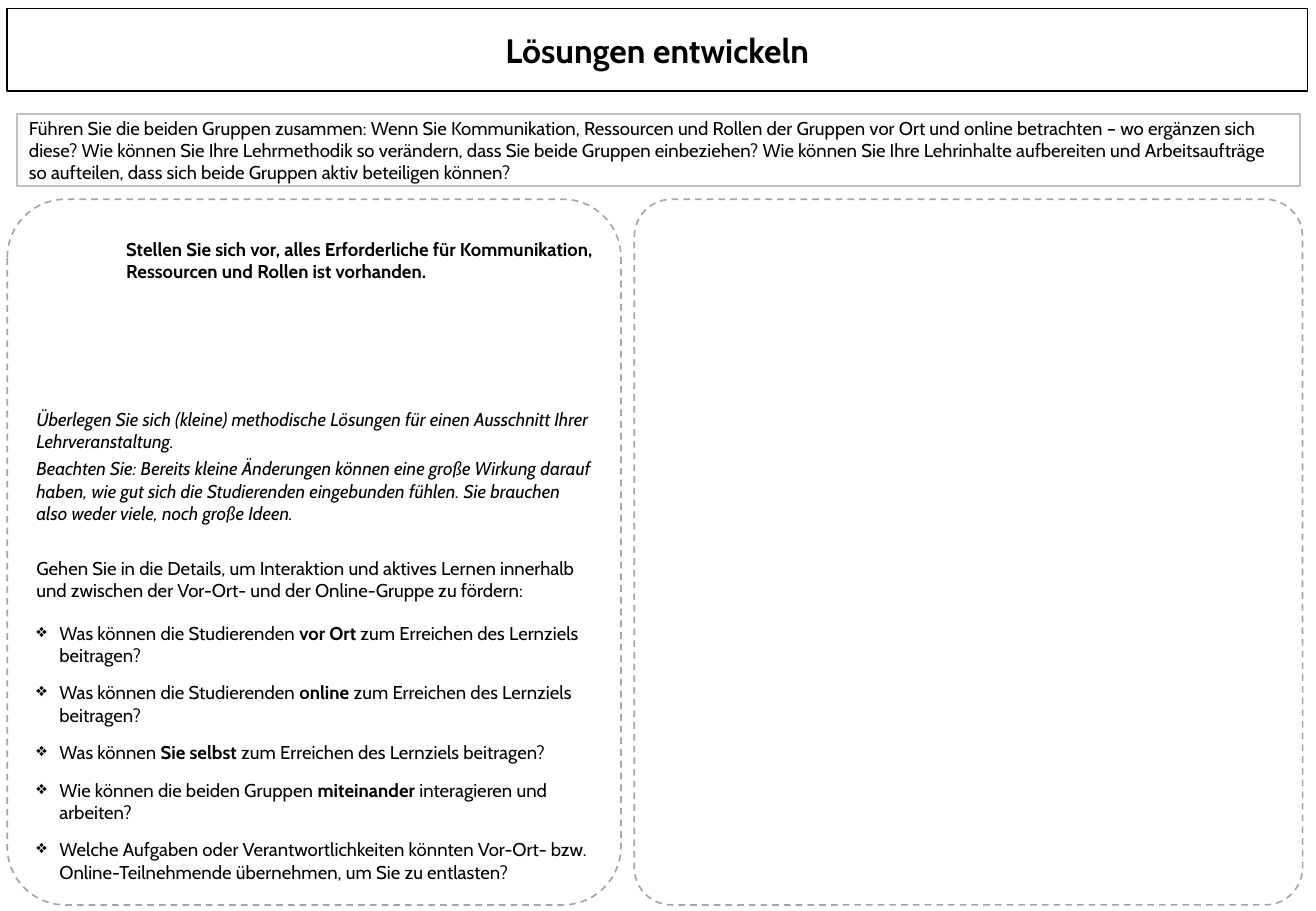
import pptx
import pptx.util
import pptx.dml.color
import pptx.enum.dml
import pptx.enum.shapes
import pptx.enum.text
import lxml.etree
import pptx.oxml.ns

Inches, Pt = pptx.util.Inches, pptx.util.Pt
Shape = pptx.enum.shapes.MSO_SHAPE
Anchor = pptx.enum.text.MSO_ANCHOR
Align = pptx.enum.text.PP_ALIGN
DASH = pptx.enum.dml.MSO_LINE.DASH

TITLE = "Lösungen entwickeln"
INTRO = (
    "Führen Sie die beiden Gruppen zusammen: Wenn Sie Kommunikation, Ressourcen "
    "und Rollen der Gruppen vor Ort und online betrachten – wo ergänzen sich diese? "
    "Wie können Sie Ihre Lehrmethodik so verändern, dass Sie beide Gruppen einbeziehen? "
    "Wie können Sie Ihre Lehrinhalte aufbereiten und Arbeitsaufträge so aufteilen, "
    "dass sich beide Gruppen aktiv beteiligen können?"
)
VISION = (
    "Stellen Sie sich vor, alles Erforderliche für Kommunikation, "
    "Ressourcen und Rollen ist vorhanden."
)
HINTS = [
    ("Überlegen Sie sich (kleine) methodische Lösungen für einen Ausschnitt "
     "Ihrer Lehrveranstaltung.", 3, True),
    ("Beachten Sie: Bereits kleine Änderungen können eine große Wirkung darauf haben, "
     "wie gut sich die Studierenden eingebunden fühlen. Sie brauchen also weder viele, "
     "noch große Ideen.", 19.4, True),
    ("Gehen Sie in die Details, um Interaktion und aktives Lernen innerhalb und "
     "zwischen der Vor-Ort- und der Online-Gruppe zu fördern:", 12, False),
]
ASKS = [
    ("Was können die Studierenden ", "vor Ort ", "zum Erreichen des Lernziels beitragen?"),
    ("Was können die Studierenden ", "online", " zum Erreichen des Lernziels beitragen?"),
    ("Was können ", "Sie selbst ", "zum Erreichen des Lernziels beitragen?"),
    ("Wie können die beiden Gruppen ", "miteinander", " interagieren und arbeiten?"),
    ("Welche Aufgaben oder Verantwortlichkeiten könnten Vor-Ort- bzw. "
     "Online-Teilnehmende übernehmen, um Sie zu entlasten?",),
]
TOP, HIGH = 1.64, 5.81

deck = pptx.Presentation()
deck.slide_width, deck.slide_height = Inches(10.83), Inches(7.5)
slide = deck.slides.add_slide(deck.slide_layouts[6])


def tint(part, code):
    part.rgb = pptx.dml.color.RGBColor.from_string(code)


def frame(kind, place, edge, fill=None, curve=None, dash=False):
    box = slide.shapes.add_shape(kind, *map(Inches, place))
    box.shadow.inherit = False
    if fill:
        box.fill.solid()
        tint(box.fill.fore_color, fill)
    else:
        box.fill.background()
    tint(box.line.color, edge)
    box.line.width = Pt(1)
    if dash:
        box.line.dash_style = DASH
    if curve:
        box.adjustments[0] = curve
    box.text_frame.word_wrap = True
    return box.text_frame


def write(para, texts, align=Align.LEFT, after=0, **style):
    para.alignment = align
    para.space_after = Pt(after)
    for spot, text in enumerate(texts):
        run = para.add_run()
        run.text = text
        look = {"name": "Cabin", "size": Pt(11), "bold": spot == 1, **style}
        for key, value in look.items():
            setattr(run.font, key, value)
        tint(run.font.color, "000000")


def bullet(para):
    props = para._p.get_or_add_pPr()
    props.set("marL", str(Inches(0.19)))
    props.set("indent", str(-Inches(0.19)))
    mark = lxml.etree.SubElement(props, pptx.oxml.ns.qn("a:buChar"))
    mark.set("char", "❖")


head = frame(Shape.RECTANGLE, (0.06, 0.07, 10.7, 0.68), "000000", "FFFFFF")
head.vertical_anchor = Anchor.MIDDLE
write(head.paragraphs[0], [TITLE], Align.CENTER, size=Pt(20), bold=True)

intro = frame(Shape.RECTANGLE, (0.14, 0.94, 10.56, 0.59), "BFBFBF")
intro.vertical_anchor = Anchor.MIDDLE
write(intro.paragraphs[0], [INTRO])

vision = slide.shapes.add_textbox(*map(Inches, (0.94, 1.91, 4.17, 0.47))).text_frame
vision.word_wrap = True
write(vision.paragraphs[0], [VISION], bold=True)

frame(Shape.ROUNDED_RECTANGLE, (5.22, TOP, 5.5, HIGH), "A6A6A6", curve=0.056, dash=True)
tasks = frame(Shape.ROUNDED_RECTANGLE, (0.06, TOP, 5.05, HIGH), "A6A6A6",
              curve=0.095, dash=True)
tasks.vertical_anchor = Anchor.BOTTOM
tasks.margin_bottom = Inches(0.04)

for spot, (text, after, slant) in enumerate(HINTS):
    para = tasks.add_paragraph() if spot else tasks.paragraphs[0]
    write(para, [text], after=after, italic=slant)
for texts in ASKS:
    para = tasks.add_paragraph()
    write(para, texts, after=9)
    bullet(para)

deck.save("out.pptx")
